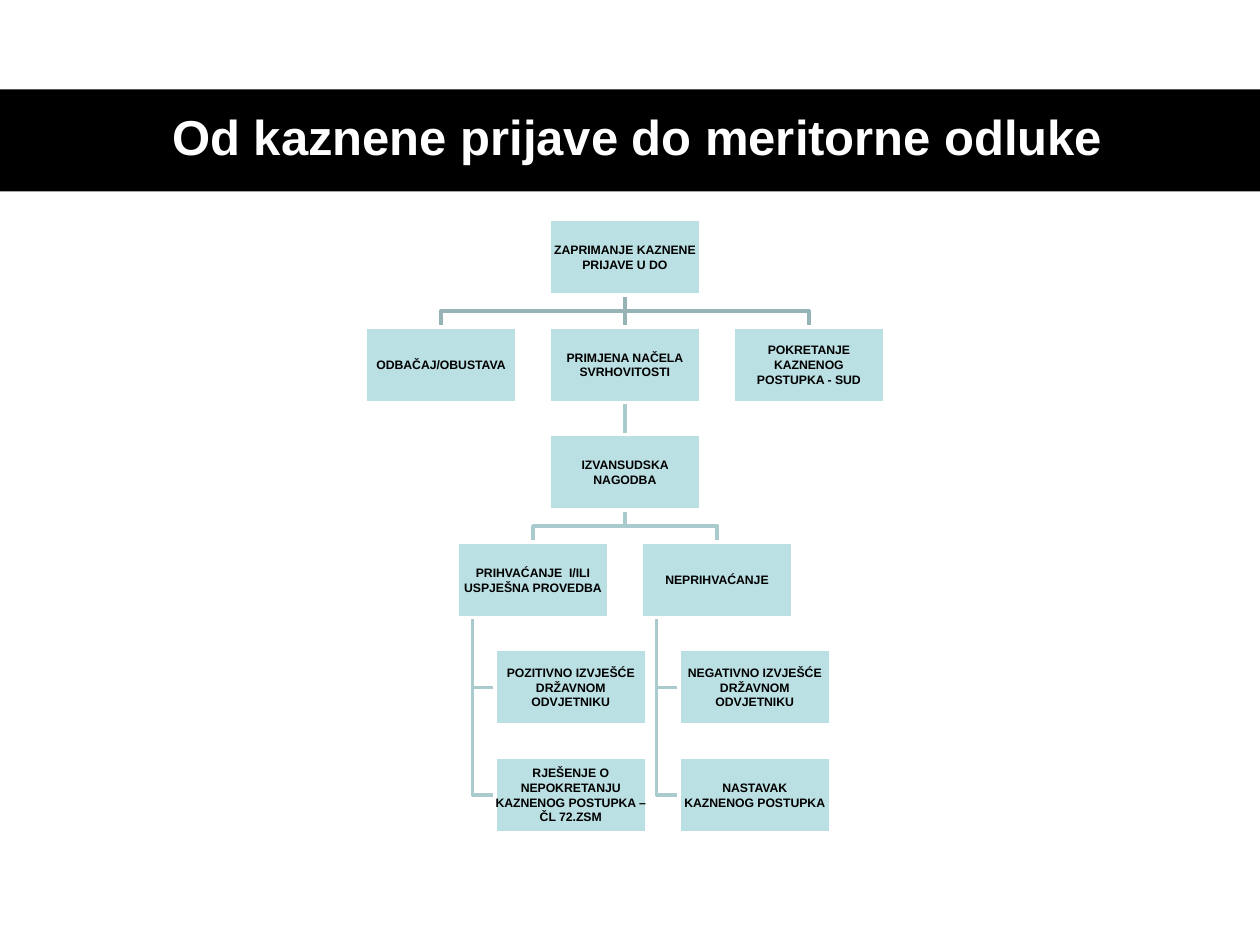
from dataclasses import dataclass

from lxml import etree
from pptx import Presentation
from pptx.dml.color import RGBColor
from pptx.enum.shapes import MSO_CONNECTOR, MSO_SHAPE
from pptx.enum.text import MSO_ANCHOR, PP_ALIGN
from pptx.oxml.ns import qn
from pptx.util import Pt

RECT = MSO_SHAPE.RECTANGLE
STRAIGHT = MSO_CONNECTOR.STRAIGHT
MIDDLE = MSO_ANCHOR.MIDDLE
CENTER = PP_ALIGN.CENTER


@dataclass(frozen=True)
class Theme:
    """Colours, font and sizes of the slide."""
    font: str = "Arial"
    black: RGBColor = RGBColor.from_string("000000")
    white: RGBColor = RGBColor.from_string("FFFFFF")
    box: RGBColor = RGBColor.from_string("BBE0E3")
    top: RGBColor = RGBColor.from_string("96B3B6")
    low: RGBColor = RGBColor.from_string("AACBCE")
    title: float = 28
    label: float = 7
    line: float = 2


THEME = Theme()
BOX_W, BOX_H = 86.4, 43.2
INDENT, STEM = 21.6, 8.64

NODES = {
    "report": (1, 0, 0, "ZAPRIMANJE KAZNENE\nPRIJAVE U DO"),
    "reject": (0, 1, 0, "ODBAČAJ/OBUSTAVA"),
    "purpose": (1, 1, 0, "PRIMJENA NAČELA\nSVRHOVITOSTI"),
    "court": (2, 1, 0, "POKRETANJE KAZNENOG\nPOSTUPKA - SUD"),
    "settle": (1, 2, 0, "IZVANSUDSKA NAGODBA"),
    "accept": (0.5, 3, 0, "PRIHVAĆANJE  I/ILI\nUSPJEŠNA PROVEDBA"),
    "refuse": (1.5, 3, 0, "NEPRIHVAĆANJE"),
    "good": (0.5, 4, INDENT, "POZITIVNO IZVJEŠĆE\nDRŽAVNOM ODVJETNIKU"),
    "close": (0.5, 5, INDENT,
              "RJEŠENJE O NEPOKRETANJU\nKAZNENOG POSTUPKA – ČL 72.ZSM"),
    "bad": (1.5, 4, INDENT, "NEGATIVNO IZVJEŠĆE\nDRŽAVNOM ODVJETNIKU"),
    "resume": (1.5, 5, INDENT, "NASTAVAK\nKAZNENOG POSTUPKA"),
}
LINKS = {
    "report": ("court", "reject", "purpose"),
    "purpose": ("settle",),
    "settle": ("accept", "refuse"),
    "accept": ("close", "good"),
    "refuse": ("resume", "bad"),
}


def write(frame, text, size, color):
    """Set centred bold text in a frame."""
    frame.text = text
    frame.word_wrap = True
    frame.vertical_anchor = MIDDLE
    for para in frame.paragraphs:
        para.alignment = CENTER
        for run in para.runs:
            font = run.font
            font.name, font.size, font.bold = THEME.font, Pt(size), True
            font.color.rgb = color


def add_box(shapes, x, y, w, h, fill):
    """Add a flat filled rectangle."""
    box = shapes.add_shape(RECT, Pt(x), Pt(y), Pt(w), Pt(h))
    box.shadow.inherit = False
    box.fill.solid()
    box.fill.fore_color.rgb = fill
    return box


def add_link(shapes, points, color):
    """Draw a straight or bent line through the points."""
    spots = [(Pt(x), Pt(y)) for x, y in points]
    if len(spots) == 2:
        link = shapes.add_connector(STRAIGHT, *spots[0], *spots[1])
        etree.SubElement(link.element.spPr, qn("a:effectLst"))
    else:
        path = shapes.build_freeform(*spots[0])
        path.add_line_segments(spots[1:], close=False)
        link = path.convert_to_shape()
        link.shadow.inherit = False
        link.fill.background()
    link.line.color.rgb = color
    link.line.width = Pt(THEME.line)


def route(start, end, hang):
    """Return the points of the line from one box to the next."""
    (px, py), (cx, cy) = start, end
    base = py + BOX_H
    if hang:
        stem, mid = px + STEM, cy + BOX_H / 2
        return [(stem, base), (stem, mid), (cx, mid)]
    px, cx = px + BOX_W / 2, cx + BOX_W / 2
    if px == cx:
        return [(px, base), (cx, cy)]
    mid = (base + cy) / 2
    return [(px, base), (px, mid), (cx, mid), (cx, cy)]


def add_title(slide, x, y, w, h):
    """Place the title on its black band."""
    title = slide.shapes.title
    band = add_box(slide.shapes, x, y, w, h, THEME.black)
    band.line.fill.background()
    title.element.addprevious(band.element)
    title.left, title.top = Pt(x + 33), Pt(y - 0.7)
    title.width, title.height = Pt(w - 57.6), Pt(h)
    write(title.text_frame, "Od kaznene prijave do meritorne odluke",
          THEME.title, THEME.white)
    title.text_frame.paragraphs[0].line_spacing = 0.9


def add_tree(slide, x, y, w, h):
    """Draw the decision tree on a grid of three columns and six rows."""
    shapes = slide.shapes.add_group_shape().shapes
    step, rise = (w - BOX_W) / 2, (h - BOX_H) / 5
    spots = {name: (x + col * step + shift, y + row * rise)
             for name, (col, row, shift, _) in NODES.items()}
    for head, kids in LINKS.items():
        color = THEME.top if head == "report" else THEME.low
        for kid in kids:
            hang = NODES[kid][2] > 0
            add_link(shapes, route(spots[head], spots[kid], hang), color)
    for name, (_, _, _, text) in NODES.items():
        box = add_box(shapes, *spots[name], BOX_W, BOX_H, THEME.box)
        box.line.color.rgb = THEME.white
        box.line.width = Pt(THEME.line)
        frame = box.text_frame
        frame.margin_left = frame.margin_right = 0
        frame.margin_top = frame.margin_bottom = 0
        write(frame, text, THEME.label, THEME.black)


def main():
    """Build and save the slide."""
    deck = Presentation()
    deck.slide_width, deck.slide_height = Pt(720), Pt(540)
    slide = deck.slides.add_slide(deck.slide_layouts[5])
    add_title(slide, 0, 51.1, 720, 58.3)
    add_tree(slide, 208.8, 125.28, 296.64, 350.64)
    deck.save("out.pptx")


if __name__ == "__main__":
    main()
